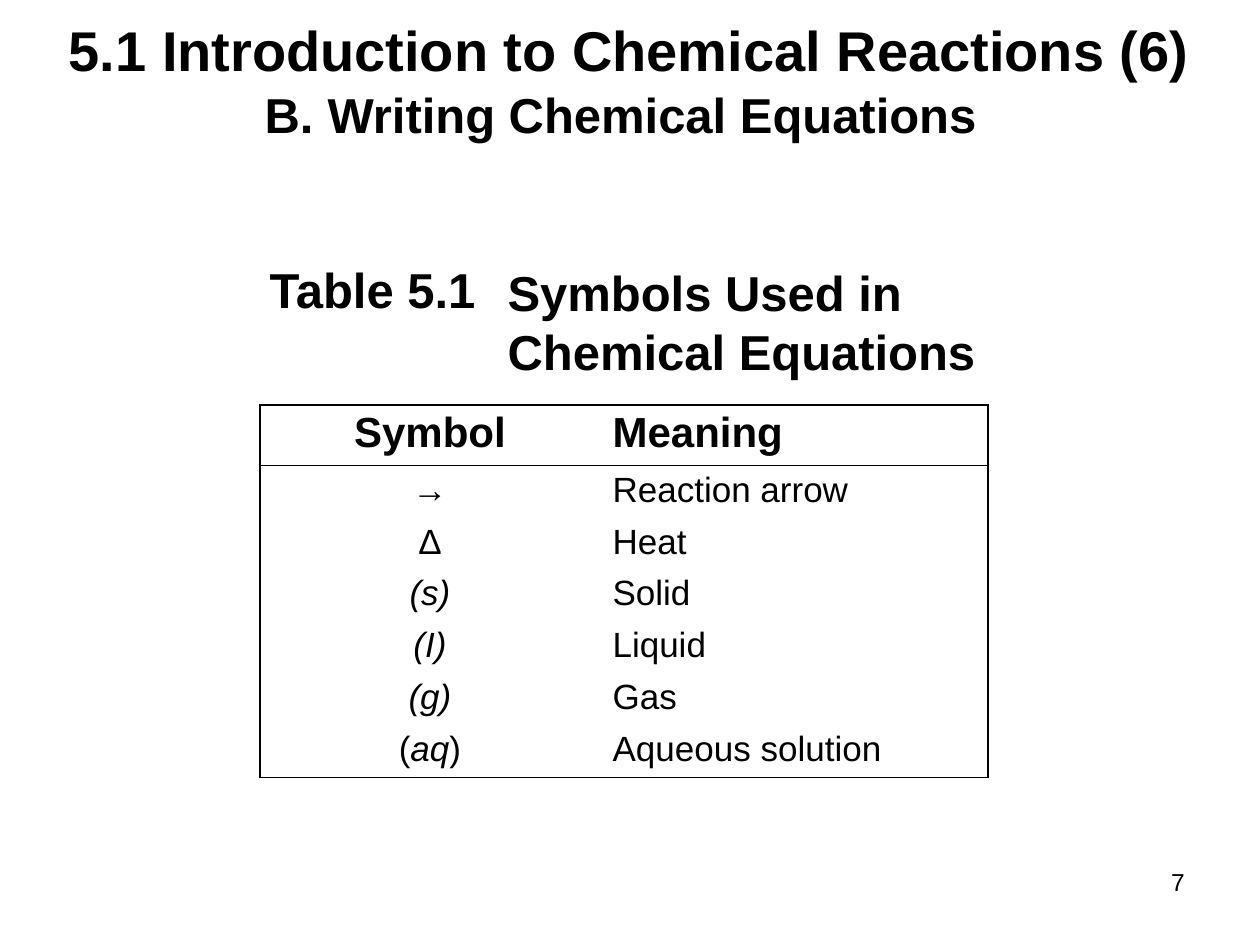
from dataclasses import dataclass

from lxml.etree import SubElement
from pptx import Presentation
from pptx.dml.color import RGBColor
from pptx.enum.text import MSO_ANCHOR, MSO_AUTO_SIZE, PP_ALIGN
from pptx.oxml.ns import qn
from pptx.util import Pt

PX = 914400 / 126


@dataclass(frozen=True)
class Theme:
    font: str = "Arial"
    ink: RGBColor = RGBColor(0, 0, 0)
    title: int = 32
    heading: int = 28
    column_head: int = 24
    cell: int = 20
    page: int = 14
    rule: int = 1


THEME = Theme()
COMPARISON_LAYOUT = 4
COLUMN_WIDTHS = (340, 388)
HEADER_HEIGHT, ROW_HEIGHT = 59, 52
CELL_MARGIN = 5

# Each symbol is a list of (text, italic) runs.
SYMBOLS = [
    ([("→", False)], "Reaction arrow"),
    ([("Δ", False)], "Heat"),
    ([("(s)", True)], "Solid"),
    ([("(I)", True)], "Liquid"),
    ([("(g)", True)], "Gas"),
    ([("(", False), ("aq", True), (")", False)], "Aqueous solution"),
]


def px(length):
    return round(length * PX)


def place(shape, left, top, width, height):
    shape.left, shape.top = px(left), px(top)
    shape.width, shape.height = px(width), px(height)


def write(frame, content, size, bold=False, align=PP_ALIGN.LEFT):
    """Fill the first paragraph with a string or a list of (text, italic) runs."""
    paragraph = frame.paragraphs[0]
    paragraph.alignment = align
    runs = [(content, False)] if isinstance(content, str) else content
    for text, italic in runs:
        run = paragraph.add_run()
        run.text = text
        font = run.font
        font.name, font.size = THEME.font, Pt(size)
        font.bold, font.italic = bold, italic
        font.color.rgb = THEME.ink
    return paragraph


def fill_placeholder(placeholder, box, content, size,
                     align=PP_ALIGN.LEFT, anchor=MSO_ANCHOR.TOP):
    place(placeholder, *box)
    frame = placeholder.text_frame
    frame.word_wrap = True
    frame.auto_size = MSO_AUTO_SIZE.NONE
    frame.vertical_anchor = anchor
    return write(frame, content, size, bold=True, align=align)


def set_bullet(paragraph, letter_number=None, indent=0):
    """Number the paragraph with a capital letter, or remove its bullet."""
    properties = paragraph._p.get_or_add_pPr()
    properties.set("marL", str(px(indent)))
    properties.set("indent", str(-px(indent)))
    if letter_number is None:
        SubElement(properties, qn("a:buNone"))
    else:
        SubElement(properties, qn("a:buAutoNum"),
                   type="alphaUcPeriod", startAt=str(letter_number))


def set_borders(cell, ruled_sides):
    properties = cell._tc.get_or_add_tcPr()
    for side in "LRTB":
        line = SubElement(properties, qn(f"a:ln{side}"), w=str(Pt(THEME.rule)))
        if side in ruled_sides:
            fill = SubElement(line, qn("a:solidFill"))
            SubElement(fill, qn("a:srgbClr"), val=str(THEME.ink))
        else:
            SubElement(line, qn("a:noFill"))


def add_symbol_table(slide, left, top):
    rows = [("Symbol", "Meaning"), *SYMBOLS]
    last = len(rows) - 1
    heights = [HEADER_HEIGHT] + [ROW_HEIGHT] * last
    table = slide.shapes.add_table(
        len(rows), len(COLUMN_WIDTHS), px(left), px(top),
        px(sum(COLUMN_WIDTHS)), px(sum(heights))).table
    table.first_row = table.horz_banding = False
    for column, width in zip(table.columns, COLUMN_WIDTHS):
        column.width = px(width)
    for r, (height, contents) in enumerate(zip(heights, rows)):
        table.rows[r].height = px(height)
        size = THEME.cell if r else THEME.column_head
        level_rules = ("T" if r < 2 else "") + ("B" if r in (0, last) else "")
        for c, content in enumerate(contents):
            cell = table.cell(r, c)
            cell.margin_top = cell.margin_bottom = px(CELL_MARGIN)
            set_borders(cell, "LR"[c] + level_rules)
            cell.fill.background()
            write(cell.text_frame, content, size, bold=r == 0,
                  align=PP_ALIGN.LEFT if c else PP_ALIGN.CENTER)


def add_page_number(slide, number):
    box = slide.shapes.add_textbox(px(903), px(861), px(294), px(66))
    box.text_frame.word_wrap = True
    write(box.text_frame, number, THEME.page, align=PP_ALIGN.RIGHT)


def main():
    presentation = Presentation()
    presentation.slide_width, presentation.slide_height = px(1260), px(945)
    slide = presentation.slides.add_slide(
        presentation.slide_layouts[COMPARISON_LAYOUT])
    title, section, table_label, table_title, unused = slide.placeholders
    unused._element.getparent().remove(unused._element)

    add_page_number(slide, "7")
    fill_placeholder(title, (6, 9, 1247, 81),
                     "5.1 Introduction to Chemical Reactions (6)",
                     THEME.title, PP_ALIGN.CENTER, MSO_ANCHOR.MIDDLE)
    heading = fill_placeholder(section, (252, 78, 816, 72),
                               "Writing Chemical Equations", THEME.heading)
    set_bullet(heading, letter_number=2, indent=63)
    for placeholder, box, content in (
        (table_label, (257, 253, 255, 71), "Table 5.1"),
        (table_title, (495, 256, 496, 129), "Symbols Used in Chemical Equations"),
    ):
        set_bullet(fill_placeholder(placeholder, box, content, THEME.heading))
    add_symbol_table(slide, 260, 405)
    presentation.save("out.pptx")


if __name__ == "__main__":
    main()
